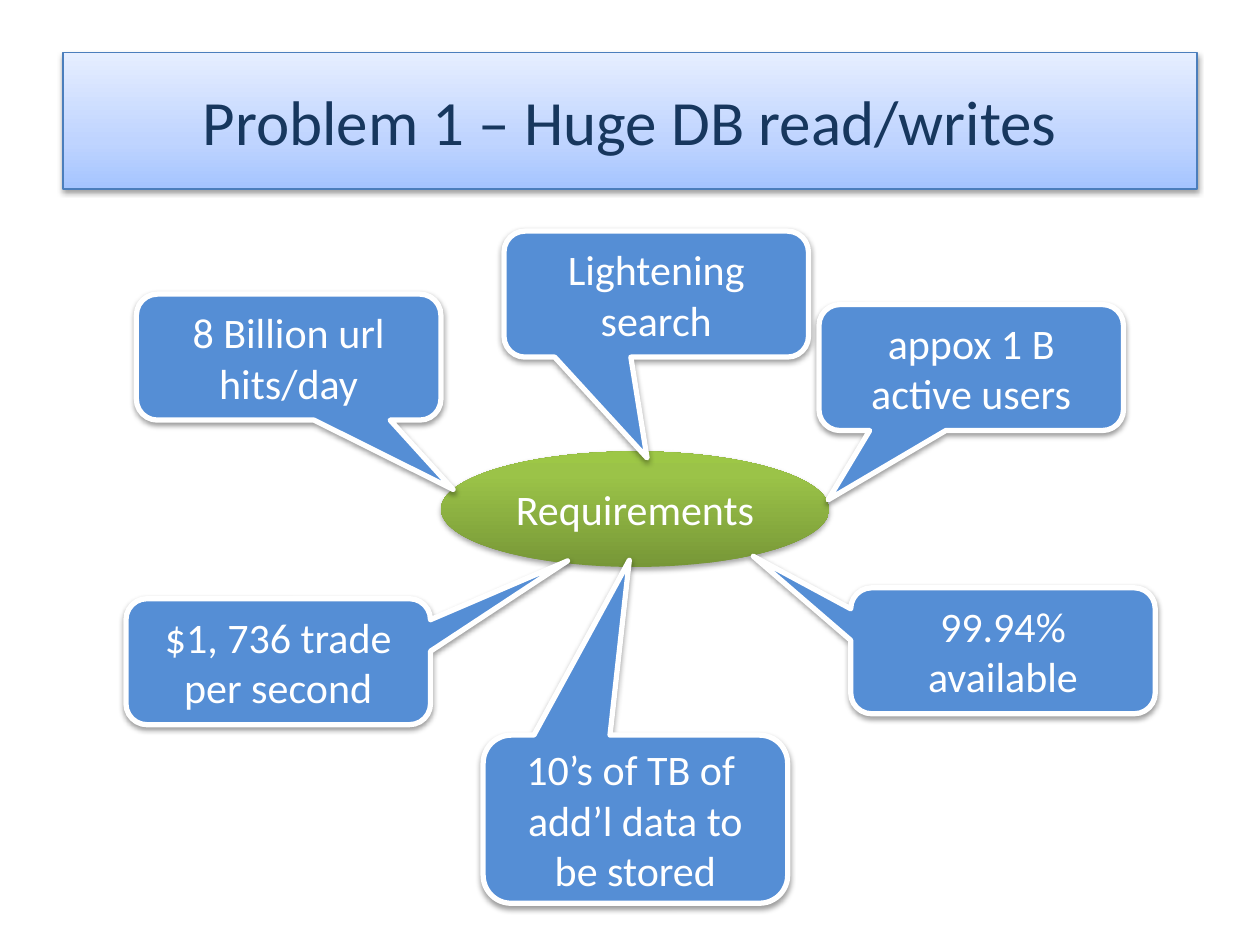
from lxml.etree import SubElement as Sub
from pptx import Presentation
from pptx.dml.color import RGBColor
from pptx.enum.shapes import MSO_SHAPE as Kind
from pptx.enum.text import MSO_ANCHOR as Anchor, PP_ALIGN as Align
from pptx.oxml.ns import qn
from pptx.util import Cm, Pt


def color(code):
    return RGBColor.from_string(code)


def write(shape, text, size=24, ink="FFFFFF", font="Calibri"):
    frame = shape.text_frame
    frame.word_wrap = True
    frame.vertical_anchor = Anchor.MIDDLE
    para = frame.paragraphs[0]
    para.text = text
    para.alignment = Align.CENTER
    for run in para.runs:
        run.font.size = Pt(size)
        run.font.name = font
        run.font.color.rgb = color(ink)


class Deck:
    blue = "558ED5"
    white = "FFFFFF"
    navy = "17375E"
    edge = "4B7EBC"
    sky = [(0, "A4C4FF"), (35, "BFD4FF"), (100, "E6EEFF")]
    green = [(0, "779737"), (80, "9BC348"), (100, "9DC746")]
    wide, high = 6.14, 2.54

    def __init__(self):
        self.file = Presentation()
        self.file.slide_width = Cm(25.4)
        self.file.slide_height = Cm(19.05)
        self.slide = self.file.slides.add_slide(self.file.slide_layouts[5])

    def shade(self, shape, alpha=38, dist=1.57):
        shape.shadow.inherit = False
        effects = shape._element.spPr.find(qn("a:effectLst"))
        outer = Sub(effects, qn("a:outerShdw"), blurRad=str(Pt(3.15)),
                    dist=str(Pt(dist)), dir="5400000", rotWithShape="0")
        tint = Sub(outer, qn("a:srgbClr"), val="000000")
        Sub(tint, qn("a:alpha"), val=str(alpha * 1000))

    def blend(self, shape, stops):
        shape.fill.gradient()
        shape.fill.gradient_angle = 90
        group = shape._element.spPr.find(qn("a:gradFill")).find(qn("a:gsLst"))
        for old in list(group):
            group.remove(old)
        for place, code in stops:
            stop = Sub(group, qn("a:gs"), pos=str(place * 1000))
            Sub(stop, qn("a:srgbClr"), val=code)

    def border(self, shape, code, width):
        shape.line.color.rgb = color(code)
        shape.line.width = Pt(width)

    def title(self, text, left, top, width, height):
        shape = self.slide.shapes.title
        shape.left, shape.top = Cm(left), Cm(top)
        shape.width, shape.height = Cm(width), Cm(height)
        form = Sub(shape._element.spPr, qn("a:prstGeom"), prst="roundRect")
        Sub(form, qn("a:avLst"))
        self.blend(shape, self.sky)
        self.border(shape, self.edge, 0.75)
        self.shade(shape)
        write(shape, text, size=36, ink=self.navy)

    def oval(self, text, left, top, width, height):
        shape = self.slide.shapes.add_shape(
            Kind.OVAL, Cm(left), Cm(top), Cm(width), Cm(height))
        self.blend(shape, self.green)
        shape.line.fill.background()
        self.shade(shape, alpha=35, dist=1.81)
        write(shape, text)

    def callout(self, text, left, top, tip, height=high):
        shape = self.slide.shapes.add_shape(
            Kind.ROUNDED_RECTANGULAR_CALLOUT,
            Cm(left), Cm(top), Cm(self.wide), Cm(height))
        shape.adjustments[0], shape.adjustments[1] = tip
        shape.fill.solid()
        shape.fill.fore_color.rgb = color(self.blue)
        self.border(shape, self.white, 3)
        self.shade(shape)
        write(shape, text)


def main():
    deck = Deck()
    deck.title("Problem 1 – Huge DB read/writes", 1.27, 1.06, 22.86, 2.75)
    deck.oval("Requirements", 8.89, 9.1, 7.83, 2.33)
    deck.callout("8 Billion url hits/day", 2.75, 5.93, (0.54, 1.05))
    deck.callout("appox 1 B active users", 16.51, 6.14, (-0.47, 1.05))
    deck.callout("99.94% available", 17.15, 11.85, (-0.82, -0.75))
    deck.callout("$1, 736 trade per second", 2.54, 12.07, (0.95, -0.8))
    deck.callout("10’s of TB of \vadd’l data to be stored", 9.74, 14.82,
                 (-0.02, -1.54), height=3.39)
    deck.callout("Lightening search", 10.16, 4.66, (-0.03, 1.3))
    deck.file.save("out.pptx")


if __name__ == "__main__":
    main()
